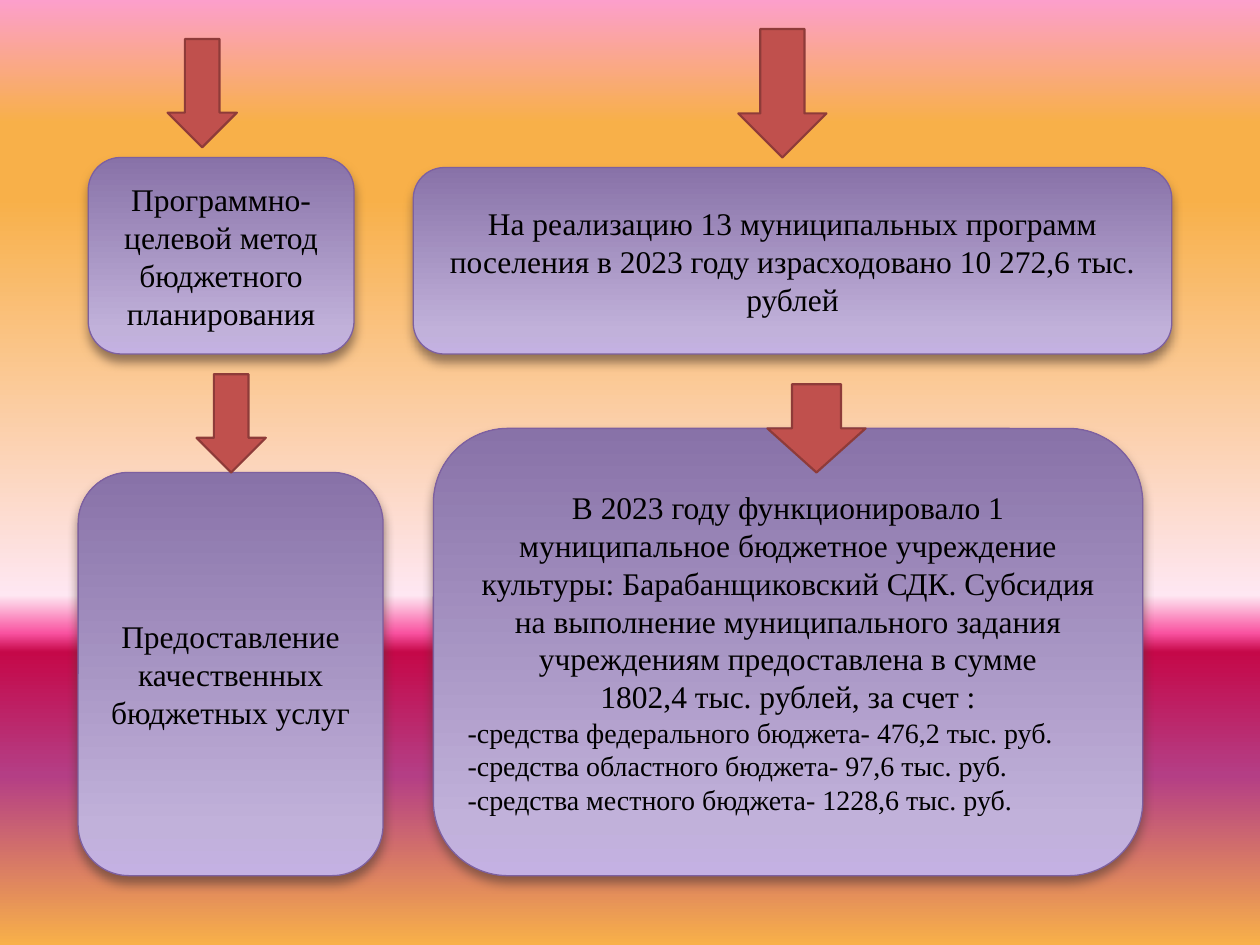
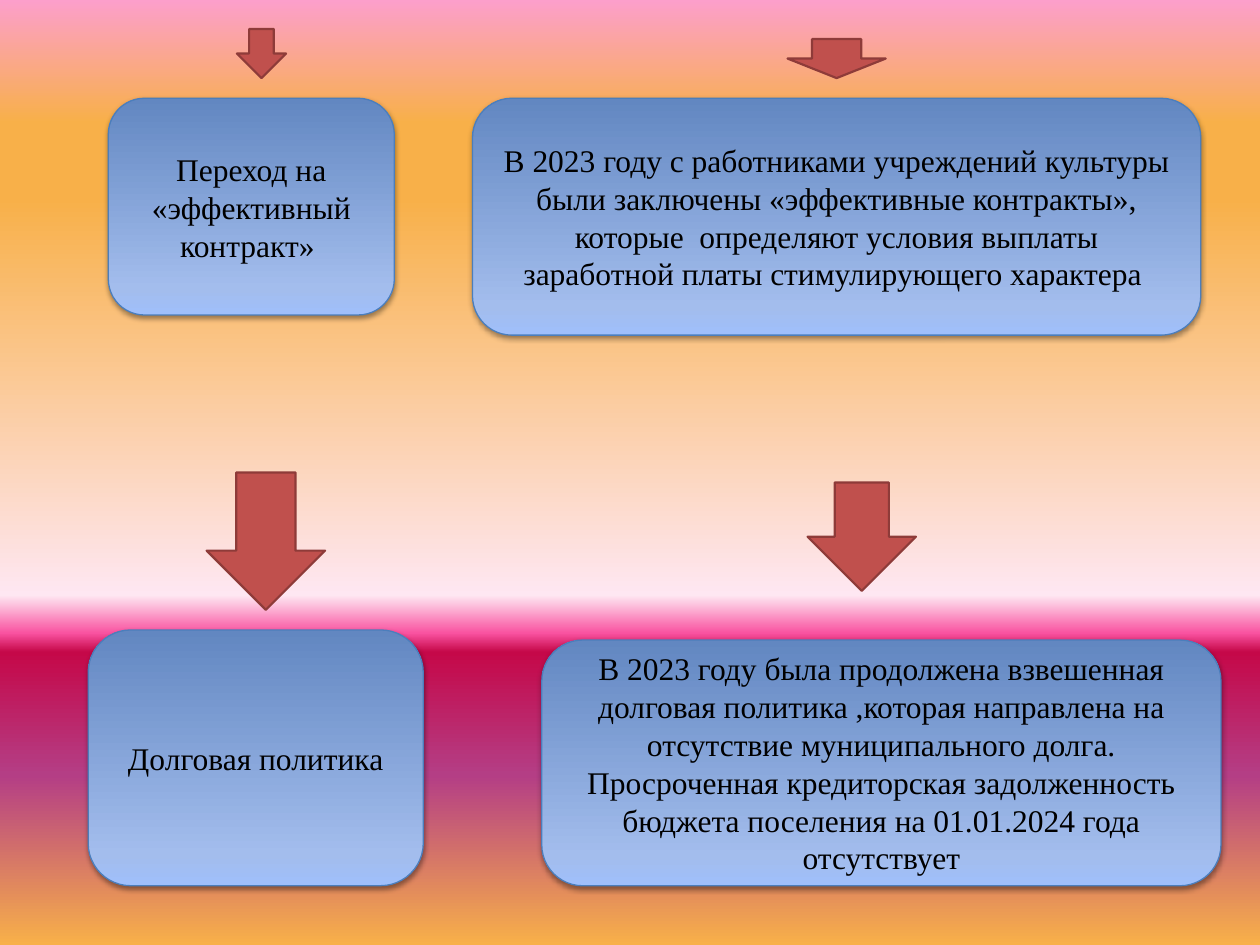
from lxml import etree
from pptx import Presentation
from pptx.dml.color import RGBColor
from pptx.enum.shapes import MSO_SHAPE
from pptx.enum.text import MSO_ANCHOR, PP_ALIGN
from pptx.oxml.ns import qn
from pptx.util import Pt

ROUND, DOWN = MSO_SHAPE.ROUNDED_RECTANGLE, MSO_SHAPE.DOWN_ARROW
CENTER, LEFT, MIDDLE = PP_ALIGN.CENTER, PP_ALIGN.LEFT, MSO_ANCHOR.MIDDLE
PX = 9144
FONT = "Times New Roman"
INK = "000000"
RED, RED_EDGE = "C0504D", "8E3B39"
SKY = [(0, "FC9FCB"), (13, "F8B049"), (21, "F8B049"), (63, "FEE7F2"),
       (67, "F952A0"), (69, "C50849"), (82, "B43E85"), (100, "F8B049")]
VIOLET = {
    "stops": [(0, "C4B1E3"), (12, "C1B1DA"), (100, "8872A8")],
    "edge": "7D60A0",
    "shade": ("4E3B30", 60, 6, 4),
}
BLUE = {
    "stops": [(0, "9FBFFB"), (12, "A3BDED"), (100, "6287C1")],
    "edge": "4B7EBC",
    "shade": ("000000", 38, 3.1, 1.6),
}

# Each cell: box, arrow relative to the box corner, centred text, list items.
METHODS = [
    ((70, 125, 211, 156), (63, -94, 55, 86),
     "Программно-целевой метод бюджетного планирования", []),
    ((328, 133, 602, 148), (258, -110, 70, 102),
     "На реализацию 13 муниципальных программ поселения в 2023 году "
     "израсходовано 10 272,6 тыс. рублей", []),
    ((62, 375, 242, 320), (94, -78, 55, 78),
     "Предоставление качественных бюджетных услуг", []),
    ((344, 340, 563, 355), (265, -35, 78, 70),
     "В 2023 году функционировало 1 муниципальное бюджетное учреждение "
     "культуры: Барабанщиковский СДК. Субсидия на выполнение муниципального "
     "задания учреждениям предоставлена в сумме\v1802,4 тыс. рублей, за счет :",
     ["-средства федерального бюджета- 476,2 тыс. руб.",
      "-средства областного бюджета- 97,6 тыс. руб.",
      "-средства местного бюджета- 1228,6 тыс. руб."]),
]
POLICIES = [
    ((86, 78, 227, 172), (102, -55, 39, 39),
     "Переход на «эффективный контракт» ", []),
    ((375, 78, 578, 188), (250, -47, 78, 31),
     "В 2023 году с работниками учреждений культуры были заключены "
     "«эффективные контракты», которые  определяют условия выплаты "
     "заработной платы стимулирующего характера ", []),
    ((70, 500, 266, 203), (94, -125, 94, 109), "Долговая политика", []),
    ((430, 508, 539, 195), (211, -125, 86, 86),
     "В 2023 году была продолжена взвешенная долговая политика ,которая "
     "направлена на отсутствие муниципального долга. Просроченная "
     "кредиторская задолженность бюджета поселения на 01.01.2024 года "
     "отсутствует", []),
]


def color(code):
    """Turn a hex string into a colour."""
    return RGBColor.from_string(code)


def add_hue(parent, code):
    """Add a colour element to an XML parent."""
    return etree.SubElement(parent, qn("a:srgbClr"), val=code)


def blend(fill, root, stops, angle):
    """Give a fill a linear gradient with any number of stops."""
    fill.gradient()
    fill.gradient_angle = angle
    track = root.find(".//" + qn("a:gsLst"))
    for old in list(track):
        track.remove(old)
    for place, code in stops:
        add_hue(etree.SubElement(track, qn("a:gs"), pos=str(place * 1000)), code)


def shade(shape, code, alpha, blur, gap):
    """Drop a soft shadow straight below a shape."""
    effects = shape._element.spPr.find(qn("a:effectLst"))
    outer = etree.SubElement(
        effects, qn("a:outerShdw"), blurRad=str(Pt(blur)), dist=str(Pt(gap)),
        dir="5400000", rotWithShape="0")
    etree.SubElement(add_hue(outer, code), qn("a:alpha"), val=str(alpha * 1000))


def add_form(slide, kind, box, edge, width):
    """Add a preset shape with an outline and no shadow."""
    shape = slide.shapes.add_shape(kind, *(side * PX for side in box))
    shape.line.color.rgb = color(edge)
    shape.line.width = Pt(width)
    shape.shadow.inherit = False
    return shape


def add_panel(slide, box, look, text, items):
    """Add a rounded panel with centred text and left-aligned items."""
    panel = add_form(slide, ROUND, box, look["edge"], 0.75)
    blend(panel.fill, panel._element.spPr, look["stops"], 90)
    shade(panel, *look["shade"])
    frame = panel.text_frame
    frame.word_wrap = True
    frame.vertical_anchor = MIDDLE
    for index, line in enumerate([text, *items]):
        para = frame.add_paragraph() if index else frame.paragraphs[0]
        para.text = line
        para.alignment = LEFT if index else CENTER
        for run in para.runs:
            run.font.name = FONT
            run.font.size = Pt(16 if index else 18)
            run.font.color.rgb = color(INK)


def add_cell(slide, look, box, arrow, text, items):
    """Add a panel and the red arrow that leads to it."""
    add_panel(slide, box, look, text, items)
    left, top, wide, high = arrow
    spot = (box[0] + left, box[1] + top, wide, high)
    mark = add_form(slide, DOWN, spot, RED_EDGE, 1.25)
    mark.fill.solid()
    mark.fill.fore_color.rgb = color(RED)


def add_page(deck, look, cells):
    """Add a slide with the shared backdrop and its cells."""
    slide = deck.slides.add_slide(deck.slide_layouts[6])
    blend(slide.background.fill, slide._element, SKY, 270)
    for cell in cells:
        add_cell(slide, look, *cell)


def main():
    """Build and save the deck."""
    deck = Presentation()
    deck.slide_width, deck.slide_height = 1000 * PX, 750 * PX
    add_page(deck, VIOLET, METHODS)
    add_page(deck, BLUE, POLICIES)
    deck.save("out.pptx")


if __name__ == "__main__":
    main()
